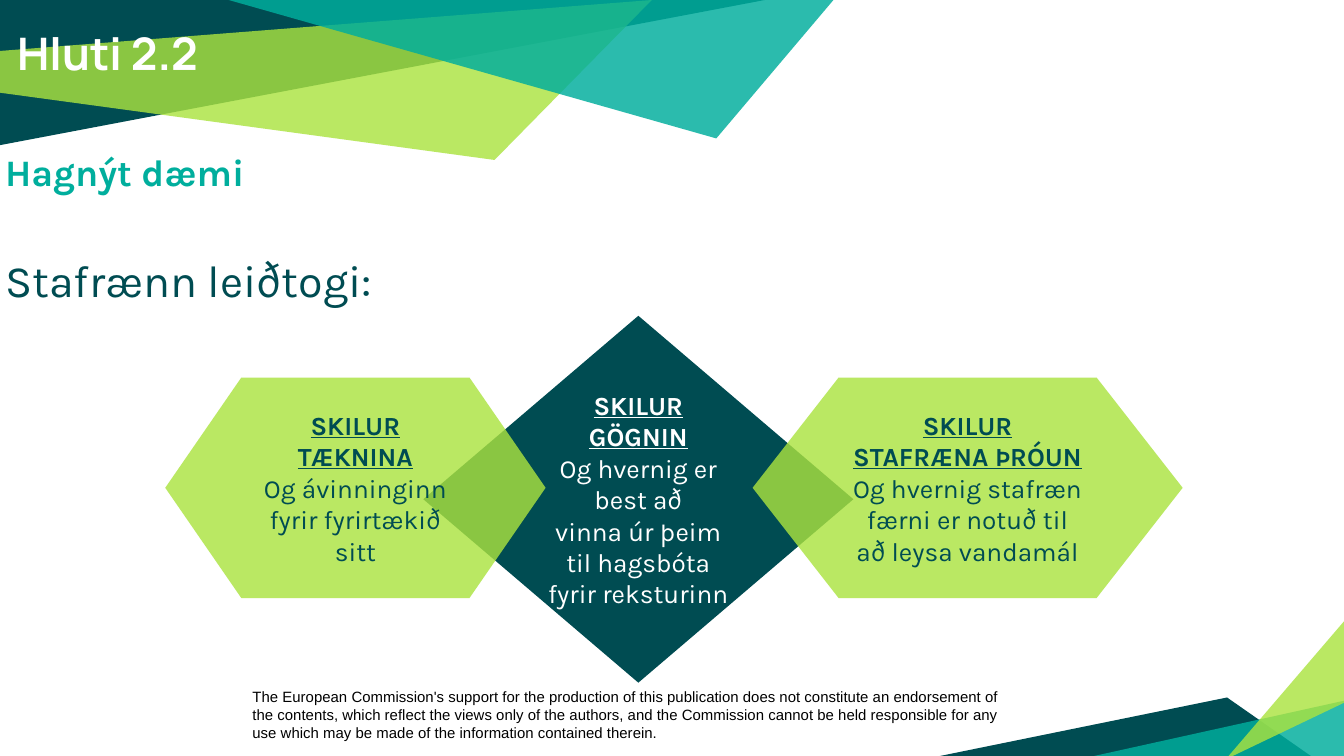
from lxml import etree
from pptx import Presentation
from pptx.dml.color import RGBColor
from pptx.enum import shapes, text
from pptx.oxml.ns import qn
from pptx.util import Inches, Pt

COLORS = {"dark": "004C52", "lime": "ABE33F", "teal": "00AE9D",
          "white": "FFFFFF", "black": "000000"}
NO_BREAK_SPACE = chr(160)


def paint(shape, color, alpha=100):
    """Give a shape a plain fill without line or shadow; alpha is in percent."""
    shape.shadow.inherit = False
    shape.line.fill.background()
    shape.fill.solid()
    shape.fill.fore_color.rgb = RGBColor.from_string(COLORS[color])
    if alpha < 100:
        srgb = shape.fill._xPr.find(qn("a:solidFill"))[0]
        etree.SubElement(srgb, qn("a:alpha")).set("val", str(alpha * 1000))


def write(shape, lines, margins=(0.1, 0.1)):
    """Fill a shape with (text, size, font, color, bold, underline) lines."""
    frame = shape.text_frame
    frame.word_wrap = True
    frame.margin_left = frame.margin_right = Inches(margins[0])
    frame.margin_top = frame.margin_bottom = Inches(margins[1])
    frame.text = "\n".join(line[0] for line in lines)
    for paragraph, (_, size, name, color, bold, underline) in zip(frame.paragraphs, lines):
        font = paragraph.runs[0].font
        font.size, font.name = Pt(size), name
        font.bold, font.underline = bold, underline
        font.color.rgb = RGBColor.from_string(COLORS[color])
    return frame


presentation = Presentation()
presentation.slide_width = Inches(10)
presentation.slide_height = Inches(10 * 9 / 16)
slide = presentation.slides.add_slide(presentation.slide_layouts[6])

# Disclaimer
disclaimer = slide.shapes.add_textbox(Inches(1.78), Inches(5.07), Inches(5.79), Inches(0.5))
write(disclaimer, [(
    "The European Commission's support for the production of this publication does not "
    "constitute an endorsement of the contents, which reflect the views only of the authors, "
    "and the Commission cannot be held responsible for any use which may be made of the "
    "information contained therein.", 8, "Arial", "black", False, False)], (0.1, 0.05))

# Corner decoration
shards = [
    ("dark", 100, [(0, 0), (0, 1.08), (5.69, 0)]),
    ("lime", 81, [(-0.01, 0.38), (0, 0.69), (3.68, 1.19), (4.85, 0)]),
    ("dark", 100, [(6.97, 5.63), (9.76, 5.63), (9.13, 5.19)]),
    ("teal", 83, [(10.02, 5.21), (10.02, 5.65), (8.03, 5.65)]),
    ("lime", 81, [(10.02, 5.22), (10.02, 4.6), (9.12, 5.65)]),
    ("teal", 83, [(1.7, 0), (5.33, 1.03), (6.21, -0.01), (6.09, 0)]),
]
for color, alpha, corners in shards:
    points = [(Inches(x), Inches(y)) for x, y in corners]
    builder = slide.shapes.build_freeform(*points[0])
    builder.add_line_segments(points[1:], close=True)
    paint(builder.convert_to_shape(), color, alpha)

# Headings
body = slide.shapes.add_textbox(Inches(-0.06), Inches(1.01), Inches(10), Inches(3.02))
body_frame = write(body, [
    ("Hagnýt dæmi", 20, "Karla", "teal", True, False),
    ("Stafrænn leiðtogi:", 24, "Karla", "dark", False, False)])
body_frame.paragraphs[1].space_before = Pt(31.5)

title = slide.shapes.add_textbox(Inches(0.03), Inches(0.09), Inches(8.06), Inches(0.6))
write(title, [("Hluti 2.2", 24, "Manrope", "white", True, False)])

# Three skills of a digital leader
diamond = shapes.MSO_SHAPE.DIAMOND
hexagon = shapes.MSO_SHAPE.FLOWCHART_PREPARATION
skills = [
    (diamond, (3.15, 2.35, 3.2, 2.73), "dark", 100, "white", "SKILUR GÖGNIN",
     f"Og hvernig er best að vinna{NO_BREAK_SPACE}úr þeim til hagsbóta fyrir reksturinn"),
    (hexagon, (1.23, 2.81, 2.83, 1.64), "lime", 81, "dark", "SKILUR TÆKNINA",
     "Og ávinninginn fyrir fyrirtækið sitt"),
    (hexagon, (5.6, 2.81, 3.2, 1.64), "lime", 81, "dark", "SKILUR STAFRÆNA ÞRÓUN",
     "Og hvernig stafræn færni er notuð til að leysa vandamál"),
]
for kind, box, fill, alpha, ink, heading, detail in skills:
    skill = slide.shapes.add_shape(kind, *map(Inches, box))
    paint(skill, fill, alpha)
    frame = write(skill, [(heading, 14, "Karla", ink, True, True),
                          (detail, 14, "Karla", ink, False, False)])
    frame.vertical_anchor = text.MSO_ANCHOR.MIDDLE
    for paragraph in frame.paragraphs:
        paragraph.alignment = text.PP_ALIGN.CENTER

presentation.save("out.pptx")
